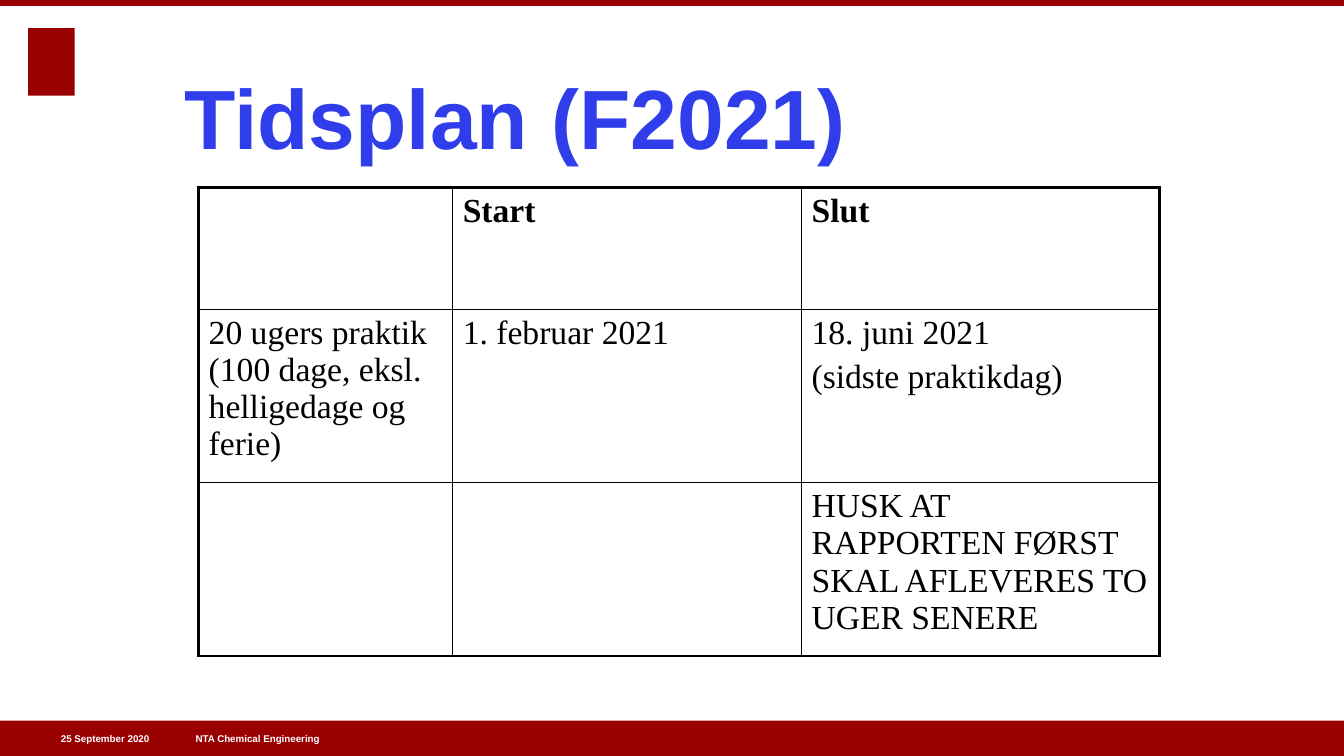
from lxml.etree import SubElement as Sub
from pptx import Presentation
from pptx.dml.color import RGBColor as RGB
from pptx.enum.shapes import MSO_SHAPE as Shape
from pptx.enum.text import MSO_ANCHOR as Anchor, PP_ALIGN as Align
from pptx.oxml.ns import qn
from pptx.util import Inches, Pt

COLORS = {"red": "990000", "blue": "2F3EEA", "black": "000000", "white": "FFFFFF"}


def style(para, size, face, color, bold):
    font = para.font
    font.size, font.name, font.bold = Pt(size), face, bold
    font.color.rgb = RGB.from_string(COLORS[color])


def edge(cell, side, width):
    """Draw one cell border; side is L, R, T or B."""
    line = Sub(cell._tc.get_or_add_tcPr(), qn(f"a:ln{side}"), w=str(Pt(width)))
    fill = Sub(line, qn("a:solidFill"))
    Sub(fill, qn("a:srgbClr"), val=COLORS["black"])


prs = Presentation()
prs.slide_width, prs.slide_height = Inches(13.33), Inches(7.5)
slide = prs.slides.add_slide(prs.slide_layouts[6])
shapes = slide.shapes

# Red emblem block, bottom band and top band
for box in [(0.28, 0.28, 0.46, 0.67), (0, 7.15, 13.33, 0.35), (0, 0, 13.33, 0.06)]:
    block = shapes.add_shape(Shape.RECTANGLE, *map(Inches, box))
    block.shadow.inherit = False
    block.fill.solid()
    block.fill.fore_color.rgb = RGB.from_string(COLORS["red"])
    block.line.fill.background()

# Footer
footer = [
    (1.94, 3.72, "NTA Chemical Engineering", Align.LEFT),
    (0.27, 1.21, "25 September 2020", Align.RIGHT),
]
for left, width, text, align in footer:
    frame = shapes.add_textbox(
        Inches(left), Inches(7.15), Inches(width), Inches(0.35)
    ).text_frame
    frame.margin_left = frame.margin_right = frame.margin_top = frame.margin_bottom = 0
    frame.word_wrap = True
    frame.vertical_anchor = Anchor.MIDDLE
    para = frame.paragraphs[0]
    para.text, para.alignment = text, align
    style(para, 7, "Arial", "white", True)

# Title
title = shapes.add_textbox(Inches(1.7), Inches(0.6), Inches(6.82), Inches(1.11))
title.text_frame.word_wrap = False
para = title.text_frame.paragraphs[0]
para.text, para.alignment = "Tidsplan (F2021)", Align.CENTER
style(para, 60, "Arial", "blue", True)

# Schedule
rows = [
    ["", "Start", "Slut"],
    [
        "20 ugers praktik (100 dage, eksl. helligedage og ferie)",
        "1. februar 2021",
        "18. juni 2021\n(sidste praktikdag)",
    ],
    ["", "", "HUSK AT RAPPORTEN FØRST SKAL AFLEVERES TO UGER SENERE"],
]
widths, heights = [2.52, 3.46, 3.55], [1.21, 1.72, 1.72]
table = shapes.add_table(
    3, 3, Inches(1.97), Inches(1.86), Inches(sum(widths)), Inches(sum(heights))
).table
table.first_row = table.horz_banding = False
for col, width in zip(table.columns, widths):
    col.width = Inches(width)
for row, height in zip(table.rows, heights):
    row.height = Inches(height)

for i, row in enumerate(rows):
    for j, text in enumerate(row):
        cell = table.cell(i, j)
        cell.text = text
        for para in cell.text_frame.paragraphs:
            para.space_before = Pt(4.8)
            style(para, 24, "Times New Roman", "black", i == 0)
        outer = {"L": j == 0, "R": j == 2, "T": i == 0, "B": i == 2}
        for side, thick in outer.items():
            edge(cell, side, 2.25 if thick else 1)
        cell.fill.background()

prs.save("out.pptx")
